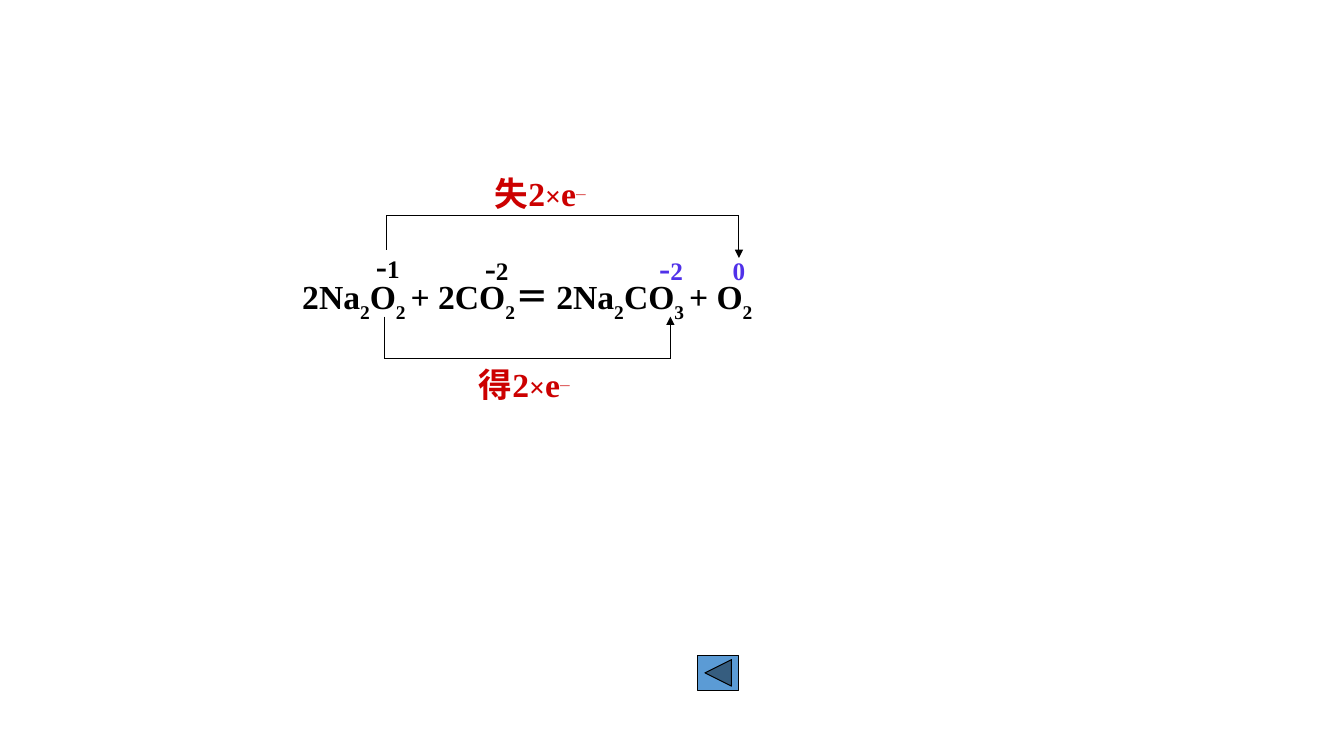
"""Build a slide showing the electron transfer in the reaction of sodium peroxide with carbon dioxide."""
from itertools import pairwise

from lxml.etree import SubElement
from pptx import Presentation
from pptx.dml.color import RGBColor
from pptx.enum.shapes import MSO_CONNECTOR as Connector, MSO_SHAPE as Shape
from pptx.enum.text import MSO_AUTO_SIZE as AutoSize
from pptx.oxml.ns import qn
from pptx.util import Inches, Pt

COLORS = {name: RGBColor.from_string(value) for name, value in {
    "black": "000000", "violet": "5031E9", "red": "CC0000", "blue": "5B9BD5"}.items()}

presentation = Presentation()
presentation.slide_width = Inches(13.33)
presentation.slide_height = Inches(7.5)
slide = presentation.slides.add_slide(presentation.slide_layouts[6])


def place(*shares):
    """Turn alternating horizontal and vertical percentages into slide lengths."""
    sides = (presentation.slide_width, presentation.slide_height)
    return [round(sides[index % 2] * share / 100) for index, share in enumerate(shares)]


def add_text(box, runs, color, wrap=False):
    """Add a text box from (text, size, baseline percentage) runs."""
    frame = slide.shapes.add_textbox(*place(*box)).text_frame
    frame.word_wrap = wrap
    frame.auto_size = AutoSize.SHAPE_TO_FIT_TEXT
    for text, size, baseline in runs:
        run = frame.paragraphs[0].add_run()
        run.text = text
        run.font.name = "Times New Roman"
        run.font.size = Pt(size)
        run.font.bold = True
        run.font.color.rgb = COLORS[color]
        if baseline:
            run.font._element.set("baseline", str(baseline * 1000))


equation = ["2Na", "2", "O", "2 ", "+ 2CO", "2", "＝ 2Na", "2", "CO", "3 ", "+ O", "2"]
equation_runs = [(part, 24, -30 * (index % 2)) for index, part in enumerate(equation)]
add_text((21.75, 35.87, 40.73, 6.67), equation_runs, "black", wrap=True)

for left, top, digit, color in [
    (27.23, 31.73, "1", "black"),
    (35.33, 32, "2", "black"),
    (48.3, 32, "2", "violet"),
]:
    add_text((left, top, 3.3, 6.67), [("-", 24, 0), (digit, 18, 0)], color)
add_text((53.78, 33.07, 2.48, 5.33), [("0", 18, 0)], "violet")

for left, top, verb in [(36.08, 22.27, "失"), (34.88, 47.47, "得")]:
    transfer_runs = [(verb + "2", 24, 0), ("×", 20, 0), ("e", 24, 0), ("—", 12, 56), (" ", 20, 0)]
    add_text((left, top, 9.9, 6.8), transfer_runs, "red")

loss_bracket = [(28.73, 33.07), (28.73, 28.53), (54.98, 28.53), (54.98, 34.13)]
gain_bracket = [(28.58, 41.87), (28.58, 47.47), (49.88, 47.47), (49.88, 41.87)]
for bracket in (loss_bracket, gain_bracket):
    for start, end in pairwise(bracket):
        connector = slide.shapes.add_connector(Connector.STRAIGHT, *place(*start, *end))
        connector.line.color.rgb = COLORS["black"]
        connector.line.width = Pt(0.75)
        if end == bracket[-1]:
            SubElement(connector.line._get_or_add_ln(), qn("a:tailEnd"), type="triangle")
        SubElement(connector._element.spPr, qn("a:effectLst"))

back_button = slide.shapes.add_shape(
    Shape.ACTION_BUTTON_BACK_OR_PREVIOUS, *place(51.9, 86.67, 3.08, 4.67))
back_button.shadow.inherit = False
back_button.fill.solid()
back_button.fill.fore_color.rgb = COLORS["blue"]
back_button.line.color.rgb = COLORS["black"]
back_button.line.width = Pt(0.75)

presentation.save("out.pptx")
